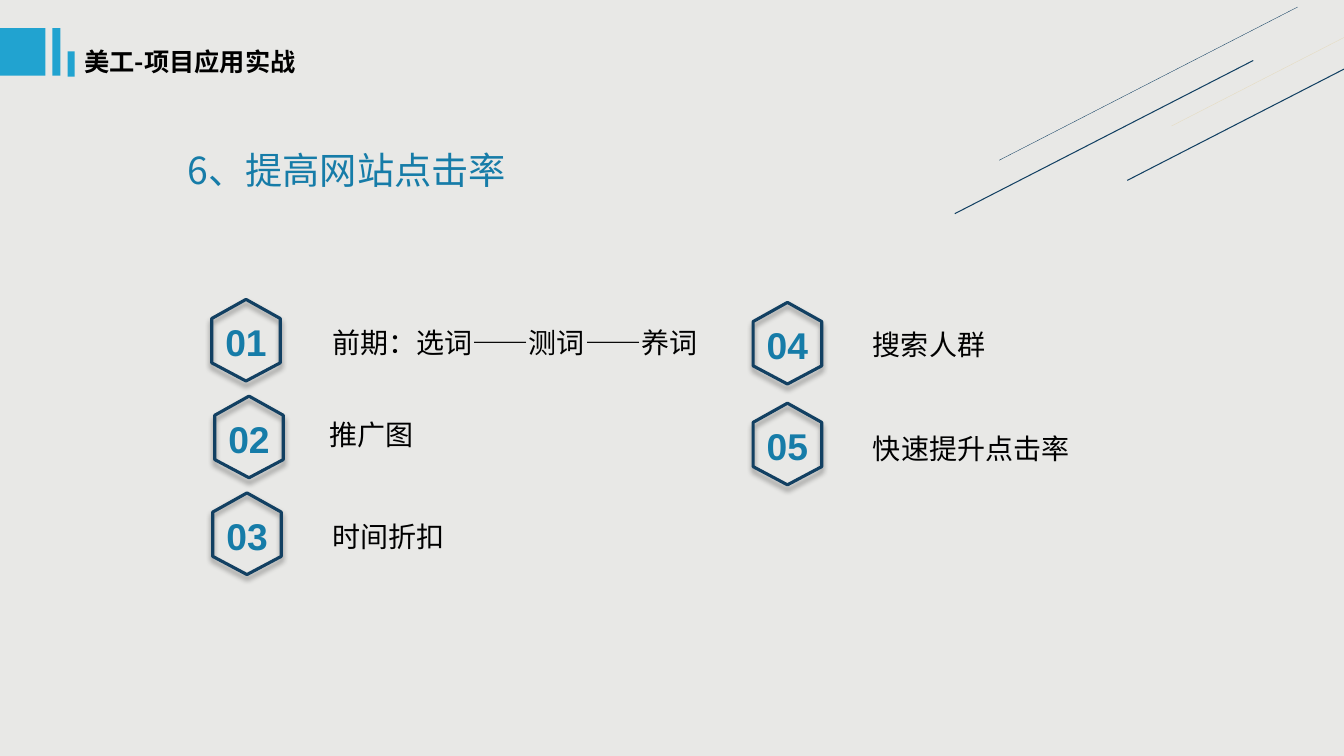
from lxml import etree
from pptx import Presentation
from pptx.dml.color import RGBColor
from pptx.enum.shapes import MSO_CONNECTOR as CONNECTOR, MSO_SHAPE as SHAPE
from pptx.enum.text import MSO_AUTO_SIZE as AUTO_SIZE, PP_ALIGN as ALIGN
from pptx.oxml import parse_xml
from pptx.oxml.ns import nsdecls, qn
from pptx.util import Inches, Pt

COLORS = {
    "background": "E8E8E6",
    "navy": "124062",
    "blue": "167CA8",
    "sky": "21A3D0",
    "gold": "DCAA1F",
    "black": "000000",
}
CJK = "Noto Sans CJK SC"

# Number, hexagon left and top, label, label left, top and width
ITEMS = [
    ("01", 2.1, 2.97, "前期：选词——测词——养词", 3.2, 3.18, 4.88),
    ("02", 2.13, 3.93, "推广图", 3.17, 4.09, 6.19),
    ("03", 2.11, 4.89, "时间折扣", 3.2, 5.1, 4.47),
    ("04", 7.47, 3, "搜索人群", 8.56, 3.2, 2.13),
    ("05", 7.47, 4, "快速提升点击率", 8.56, 4.23, 2.58),
]
HEXAGON = [(0.34, 0), (0.68, 0.19), (0.68, 0.63), (0.34, 0.81), (0, 0.63), (0, 0.19)]
HEADER_BARS = [(0, 0.28, 0.45, 0.47), (0.52, 0.28, 0.08, 0.47), (0.67, 0.51, 0.07, 0.25)]
# Start x and y, colour, width, opacity in percent
DIAGONALS = [
    (9.47, 2.12, "navy", 0.75, 100),
    (9.91, 1.59, "navy", 0.25, 100),
    (11.18, 1.79, "navy", 0.75, 100),
    (11.62, 1.25, "gold", 0.25, 20),
]


def rgb(name):
    return RGBColor.from_string(COLORS[name])


def add_text(slide, text, left, top, width, height, size, color="black",
             font=CJK, bold=False, align=ALIGN.LEFT, wrap=True):
    box = slide.shapes.add_textbox(Inches(left), Inches(top), Inches(width), Inches(height))
    tf = box.text_frame
    tf.word_wrap = wrap
    tf.auto_size = AUTO_SIZE.SHAPE_TO_FIT_TEXT
    p = tf.paragraphs[0]
    p.text = text
    p.alignment = align
    r = p.runs[0]
    r.font.size = Pt(size)
    r.font.name = font
    r.font.bold = bold
    r.font.color.rgb = rgb(color)
    # East Asian typeface
    etree.SubElement(r.font._element, qn("a:ea")).set("typeface", font)


def add_bar(slide, left, top, width, height):
    sp = slide.shapes.add_shape(SHAPE.RECTANGLE, Inches(left), Inches(top),
                                Inches(width), Inches(height))
    sp.shadow.inherit = False
    sp.fill.solid()
    sp.fill.fore_color.rgb = rgb("sky")
    sp.line.fill.background()


def add_diagonal(slide, x, y, color, width, opacity):
    line = slide.shapes.add_connector(CONNECTOR.STRAIGHT, Inches(x), Inches(y),
                                      Inches(x + 2.96), Inches(y - 1.52))
    line.line.color.rgb = rgb(color)
    line.line.width = Pt(width)
    if opacity < 100:
        clr = line.line._ln.find(".//" + qn("a:srgbClr"))
        etree.SubElement(clr, qn("a:alpha")).set("val", str(opacity * 1000))
    etree.SubElement(line._element.spPr, qn("a:effectLst"))


def add_badge(slide, number, left, top):
    points = [(Inches(left + x), Inches(top + y)) for x, y in HEXAGON]
    builder = slide.shapes.build_freeform(*points[0])
    builder.add_line_segments(points[1:], close=True)
    sp = builder.convert_to_shape()
    sp.fill.background()
    sp.line.color.rgb = rgb("navy")
    sp.line.width = Pt(2.25)
    # Soft shadow below the outline
    sp._element.spPr.append(parse_xml(
        f'<a:effectLst {nsdecls("a")}>'
        f'<a:outerShdw blurRad="{Pt(4)}" dist="{Pt(3)}" dir="5400000" rotWithShape="0">'
        f'<a:srgbClr val="{COLORS["black"]}"><a:alpha val="40000"/></a:srgbClr>'
        '</a:outerShdw></a:effectLst>'))
    add_text(slide, number, left + 0.03, top + 0.15, 0.62, 0.55, 26.6, "blue",
             font="Arial", bold=True, align=ALIGN.CENTER, wrap=False)


def main():
    prs = Presentation()
    prs.slide_width, prs.slide_height = Inches(13.33), Inches(7.5)
    slide = prs.slides.add_slide(prs.slide_layouts[6])
    slide.background.fill.solid()
    slide.background.fill.fore_color.rgb = rgb("background")

    # Decorative lines
    for diagonal in DIAGONALS:
        add_diagonal(slide, *diagonal)

    # Header and title
    for bar in HEADER_BARS:
        add_bar(slide, *bar)
    add_text(slide, "美工-项目应用实战", 0.74, 0.41, 2.71, 0.4, 18, bold=True)
    add_text(slide, "6、提高网站点击率", 1.76, 1.41, 5.68, 0.55, 26.6, "blue")

    # Numbered items
    for number, x, y, label, left, top, width in ITEMS:
        add_badge(slide, number, x, y)
        add_text(slide, label, left, top, width, 0.44, 20)

    prs.save("out.pptx")


if __name__ == "__main__":
    main()
